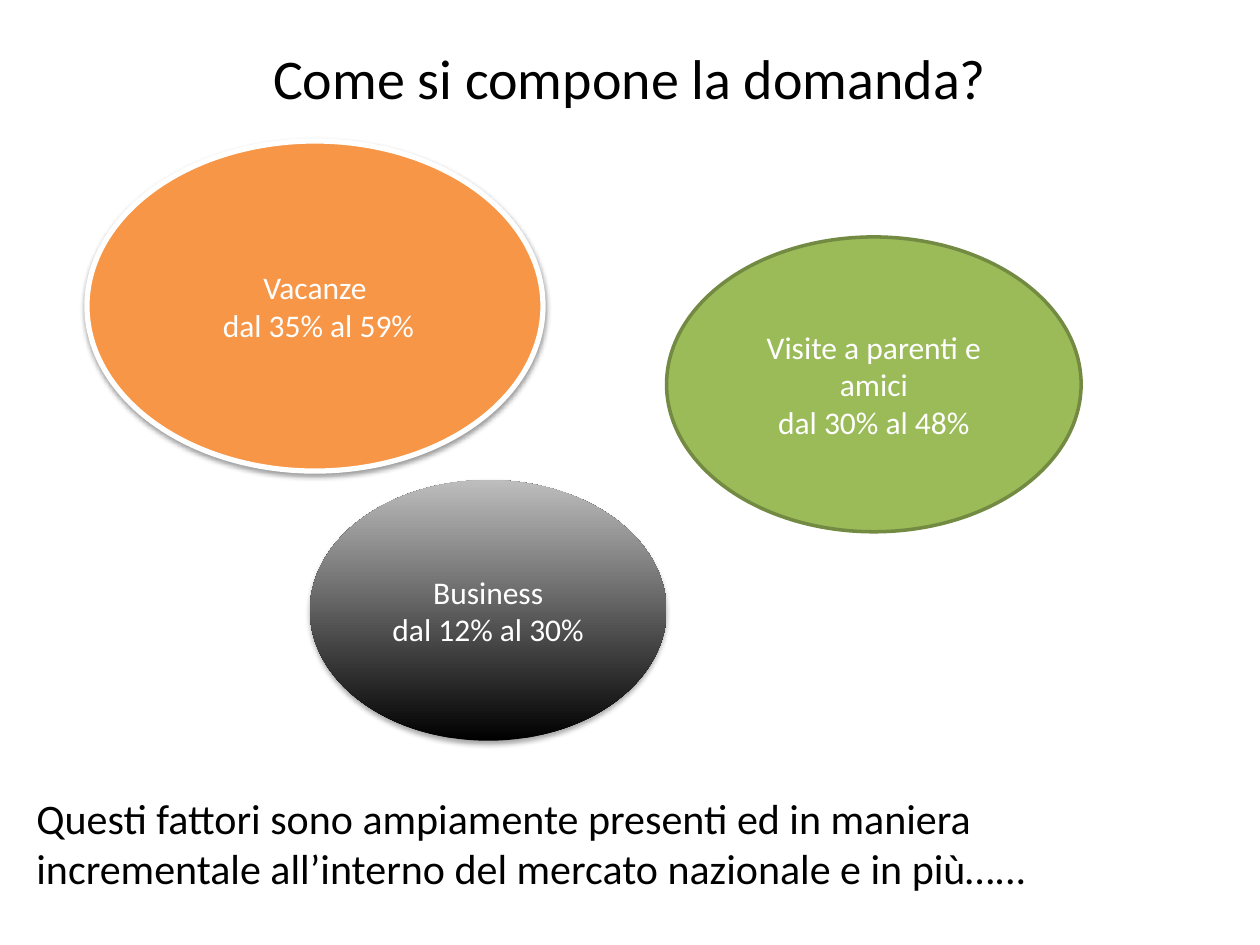
from lxml import etree
from pptx import Presentation
from pptx.dml.color import RGBColor
from pptx.enum import shapes, text
from pptx.oxml.ns import qn
from pptx.util import Pt

BLACK = RGBColor(0x00, 0x00, 0x00)
WHITE = RGBColor(0xFF, 0xFF, 0xFF)
ORANGE = RGBColor(0xF7, 0x96, 0x46)
GREEN = RGBColor(0x9B, 0xBB, 0x59)
DARK_GREEN = RGBColor(0x73, 0x8A, 0x42)
GRAY = RGBColor(0xBD, 0xBD, 0xBD)


def write_lines(frame, lines, size, color, alignment):
    for index, line in enumerate(lines):
        paragraph = frame.paragraphs[0] if index == 0 else frame.add_paragraph()
        paragraph.alignment = alignment
        run = paragraph.add_run()
        run.text = line
        run.font.name = "Calibri"
        run.font.size = Pt(size)
        run.font.color.rgb = color


def place(shape, box):
    shape.left, shape.top, shape.width, shape.height = (Pt(length) for length in box)


def add_shadow(shape, opacity, distance):
    effects = shape._element.spPr.find(qn("a:effectLst"))
    shadow = etree.SubElement(
        effects, qn("a:outerShdw"), blurRad=str(Pt(3.1)),
        dist=str(Pt(distance)), dir="5400000", rotWithShape="0")
    color = etree.SubElement(shadow, qn("a:srgbClr"), val=str(BLACK))
    etree.SubElement(color, qn("a:alpha"), val=str(opacity * 1000))


def set_title(slide, box, title):
    shape = slide.shapes.title
    place(shape, box)
    shape.text_frame.vertical_anchor = text.MSO_ANCHOR.MIDDLE
    write_lines(shape.text_frame, [title], 32, BLACK, text.PP_ALIGN.CENTER)


def add_segment(slide, box, lines, colors, line=None, shadow=None):
    shape = slide.shapes.add_shape(
        shapes.MSO_SHAPE.OVAL, *(Pt(length) for length in box))
    if len(colors) > 1:
        shape.fill.gradient()
        shape.fill.gradient_angle = 90
        for stop, color in zip(shape.fill.gradient_stops, colors):
            stop.color.rgb = color
    else:
        shape.fill.solid()
        shape.fill.fore_color.rgb = colors[0]
    if line:
        color, width = line
        shape.line.color.rgb = color
        shape.line.width = Pt(width)
    else:
        shape.line.fill.background()
    shape.shadow.inherit = False
    if shadow:
        add_shadow(shape, *shadow)
    frame = shape.text_frame
    frame.word_wrap = True
    frame.vertical_anchor = text.MSO_ANCHOR.MIDDLE
    write_lines(frame, lines, 18, WHITE, text.PP_ALIGN.CENTER)


def add_conclusion(slide, box, lines):
    shape = slide.shapes.add_textbox(*(Pt(length) for length in box))
    frame = shape.text_frame
    frame.word_wrap = False
    frame.auto_size = text.MSO_AUTO_SIZE.SHAPE_TO_FIT_TEXT
    write_lines(frame, lines, 24, BLACK, text.PP_ALIGN.LEFT)


def main():
    presentation = Presentation()
    presentation.slide_width, presentation.slide_height = Pt(720), Pt(540)
    slide = presentation.slides.add_slide(presentation.slide_layouts[5])
    set_title(slide, (36, 21.6, 648, 45.4), "Come si compone la domanda?")
    add_segment(slide, (49.7, 80.6, 260.6, 188.6),
                ["Vacanze", " dal 35% al 59%"],
                [ORANGE], line=(WHITE, 3), shadow=(38, 1.6))
    add_segment(slide, (380.9, 135.4, 236.9, 168.5),
                ["Visite a parenti e amici", "dal 30% al 48%"],
                [GREEN], line=(DARK_GREEN, 2))
    add_segment(slide, (177.1, 274.3, 203.8, 149),
                ["Business", "dal 12% al 30%"],
                [BLACK, GRAY], shadow=(35, 1.8))
    add_conclusion(slide, (13.7, 449.3, 604.1, 65.5),
                   ["Questi fattori sono ampiamente presenti ed in maniera",
                    "incrementale all’interno del mercato nazionale e in più…..."])
    presentation.save("out.pptx")


if __name__ == "__main__":
    main()
